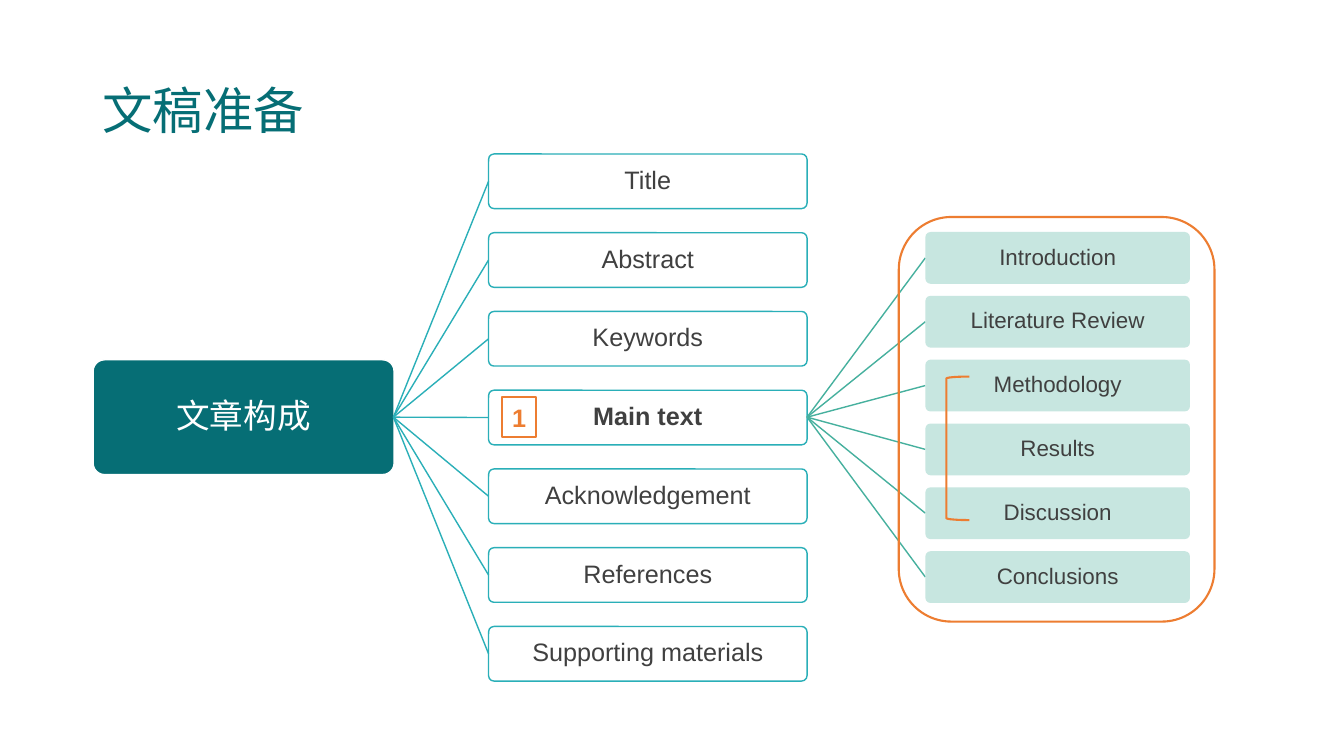
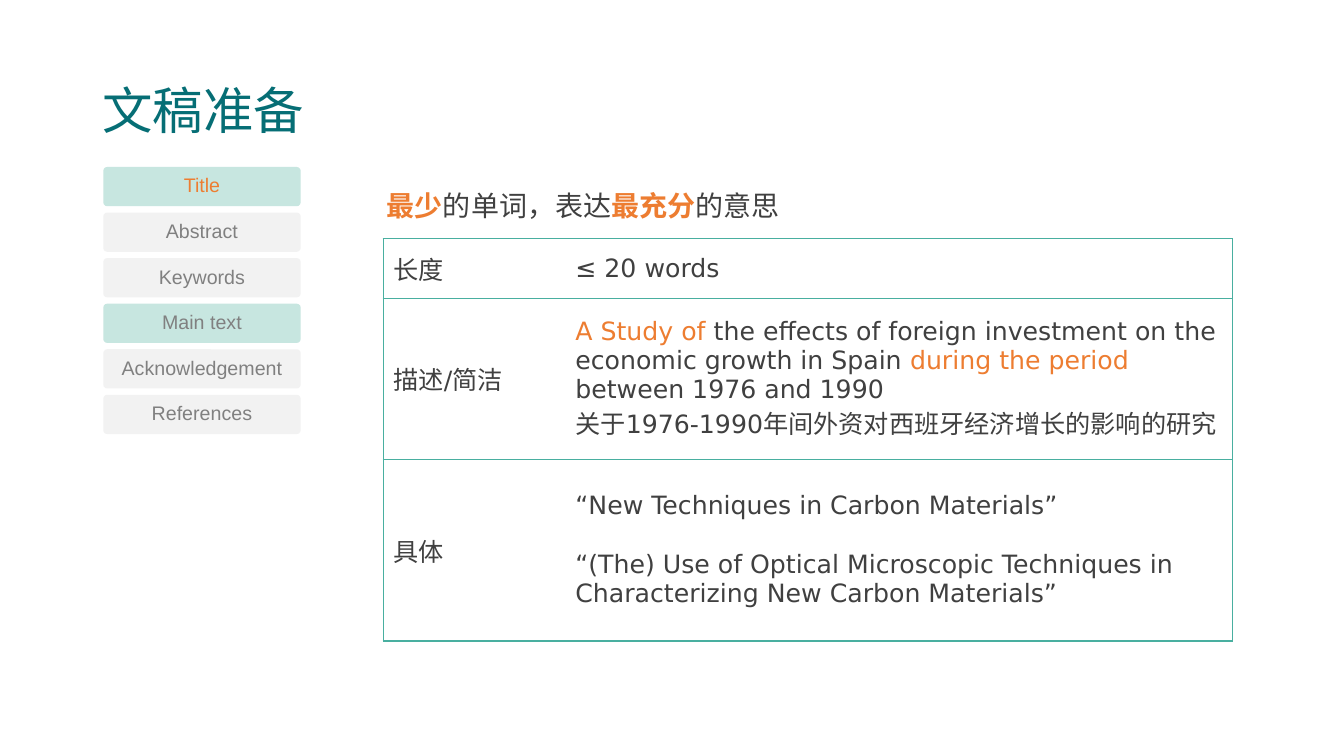
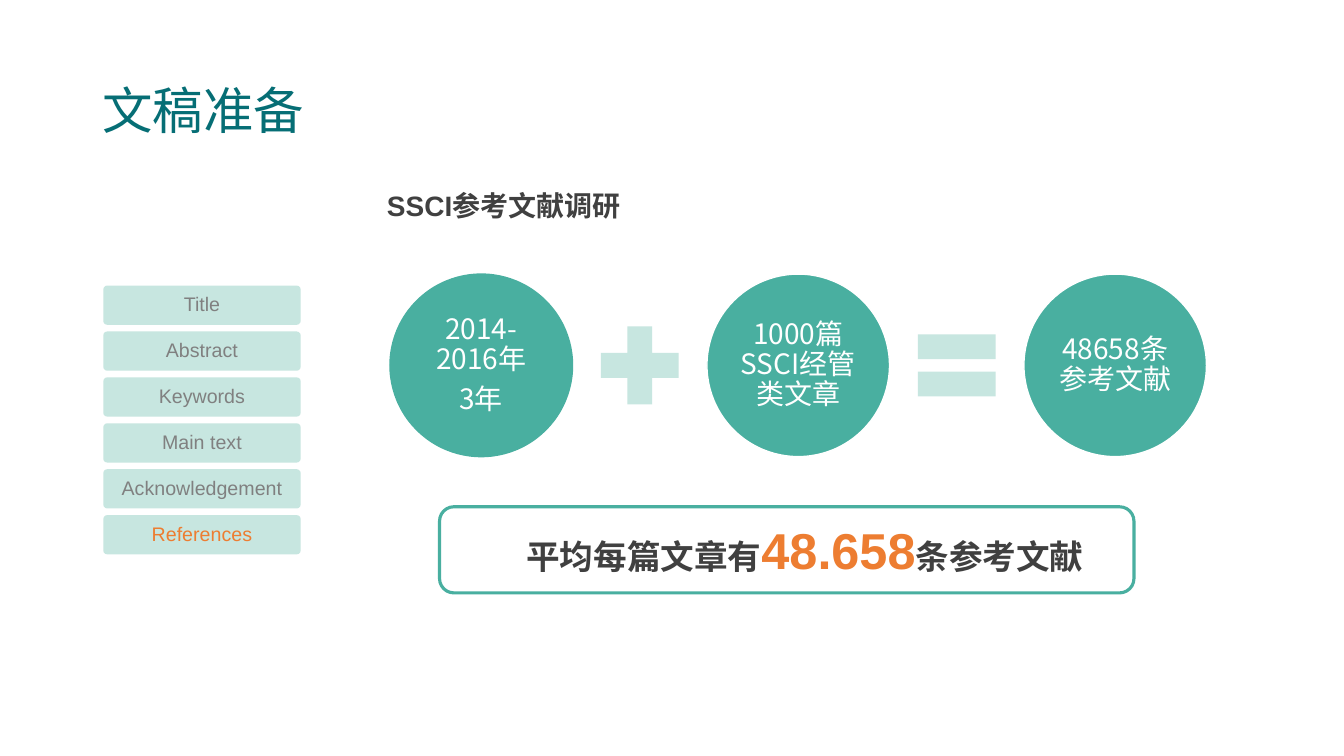
from lxml import etree
from pptx import Presentation
from pptx.dml.color import RGBColor
from pptx.enum.shapes import MSO_CONNECTOR, MSO_SHAPE
from pptx.enum.text import MSO_ANCHOR, PP_ALIGN
from pptx.oxml.ns import qn
from pptx.util import Pt

TEAL = RGBColor(0x06, 0x6E, 0x75)
CYAN = RGBColor(0x2A, 0xAF, 0xB8)
GREEN = RGBColor(0x46, 0xB0, 0x9E)
SEA = RGBColor(0x49, 0xAF, 0xA0)
MINT = RGBColor(0xC7, 0xE6, 0xE0)
PALE = RGBColor(0xF2, 0xF2, 0xF2)
ORANGE = RGBColor(0xED, 0x7D, 0x31)
DARK = RGBColor(0x40, 0x40, 0x40)
GREY = RGBColor(0x80, 0x80, 0x80)
WHITE = RGBColor(0xFF, 0xFF, 0xFF)

LATIN, CHINESE, TABLE_FONT = "Arial", "Noto Sans CJK SC", "DejaVu Sans"
LEFT, CENTER = PP_ALIGN.LEFT, PP_ALIGN.CENTER
MIDDLE = MSO_ANCHOR.MIDDLE
STRAIGHT = MSO_CONNECTOR.STRAIGHT
RECT, ROUND, OVAL = MSO_SHAPE.RECTANGLE, MSO_SHAPE.ROUNDED_RECTANGLE, MSO_SHAPE.OVAL
BRACKET = MSO_SHAPE.LEFT_BRACKET
PLUS, EQUAL = MSO_SHAPE.MATH_PLUS, MSO_SHAPE.MATH_EQUAL

TITLE = "文稿准备"
SECTIONS = ["Title", "Abstract", "Keywords", "Main text", "Acknowledgement", "References"]


class Deck:
    """Holds the shared style and the page being drawn."""

    def __init__(self):
        self.show = Presentation()
        self.show.slide_width, self.show.slide_height = Pt(960), Pt(540)
        self.page = None

    def new_page(self):
        self.page = self.show.slides.add_slide(self.show.slide_layouts[5])
        title = self.page.shapes.title
        title.left, title.top, title.width, title.height = Pt(66), Pt(29), Pt(828), Pt(104)
        title.text_frame.vertical_anchor = MIDDLE
        self.set_text(title.text_frame, [TITLE], 36, TEAL, align=LEFT, spacing=0.9)

    def set_text(self, frame, lines, size, color, font=LATIN, bold=False, align=LEFT,
                 spacing=1.0, gap=0):
        """Fill in paragraphs; a line is a string or a list of (text, changes) spans."""
        for index, line in enumerate(lines):
            para = frame.add_paragraph() if index else frame.paragraphs[0]
            para.alignment, para.line_spacing = align, spacing
            if index:
                para.space_before = Pt(gap)
            para.font.name, para.font.size, para.font.bold = font, Pt(size), bold
            para.font.color.rgb = color
            east_asian = etree.SubElement(para.font._rPr, qn("a:ea"))
            east_asian.set("typeface", CHINESE)
            for text, changes in [(line, {})] if isinstance(line, str) else line:
                span = para.add_run()
                span.text = text
                if "color" in changes:
                    span.font.color.rgb = changes["color"]
                if "bold" in changes:
                    span.font.bold = changes["bold"]
                if "size" in changes:
                    span.font.size = Pt(changes["size"])

    def shape(self, kind, left, top, width, height, fill=None, line=None, weight=1,
              corner=None, inset=1):
        item = self.page.shapes.add_shape(kind, Pt(left), Pt(top), Pt(width), Pt(height))
        item.shadow.inherit = False
        if fill is None:
            item.fill.background()
        else:
            item.fill.solid()
            item.fill.fore_color.rgb = fill
        if line is None:
            item.line.fill.background()
        else:
            item.line.color.rgb, item.line.width = line, Pt(weight)
        if corner is not None:
            item.adjustments[0] = corner
        frame = item.text_frame
        frame.word_wrap, frame.vertical_anchor = True, MIDDLE
        frame.margin_left = frame.margin_right = Pt(inset)
        frame.margin_top = frame.margin_bottom = Pt(inset)
        return item

    def label_box(self, text, left, top, width, height, size, color=DARK, font=LATIN,
                  bold=False, **look):
        box = self.shape(ROUND, left, top, width, height, corner=0.1, **look)
        self.set_text(box.text_frame, [text], size, color, font, bold, CENTER, 0.9)

    def connect(self, start, end, color):
        link = self.page.shapes.add_connector(STRAIGHT, *(Pt(v) for v in start + end))
        link.line.color.rgb, link.line.width = color, Pt(1)
        etree.SubElement(link._element.spPr, qn("a:effectLst"))

    def headline(self, line, **style):
        box = self.page.shapes.add_textbox(Pt(269.3), Pt(119), Pt(590), Pt(52))
        box.text_frame.word_wrap = True
        self.set_text(box.text_frame, [line], 20, DARK, spacing=1.5, **style)

    def section_list(self, top, pitch, fills, active):
        for index, (name, fill) in enumerate(zip(SECTIONS, fills)):
            color = ORANGE if name == active else GREY
            self.label_box(name, 73.8, top + index * pitch, 141, 28, 14, color, fill=fill)

    def fan(self, names, start, left, top, pitch, width, height, size, link_color,
            strong=None, **look):
        """Stack boxes and join each one to the start point."""
        for index, name in enumerate(names):
            box_top = top + index * pitch
            self.connect(start, (left, box_top + height / 2), link_color)
            self.label_box(name, left, box_top, width, height, size,
                           bold=name == strong, **look)

    def table(self, left, top, widths, heights, rows):
        frame = self.page.shapes.add_table(len(rows), len(widths), Pt(left), Pt(top),
                                           Pt(sum(widths)), Pt(sum(heights)))
        grid = frame.table
        grid.first_row = grid.horz_banding = False
        for column, width in zip(grid.columns, widths):
            column.width = Pt(width)
        for row, height in zip(grid.rows, heights):
            row.height = Pt(height)
        for r, row in enumerate(rows):
            for c, lines in enumerate(row):
                cell = grid.cell(r, c)
                cell.vertical_anchor = MIDDLE
                last = c == len(widths) - 1
                self.cell_borders(cell, {"L": c == 0, "R": last, "T": True, "B": True})
                cell.fill.solid()
                cell.fill.fore_color.rgb = WHITE
                gap = 21 if r == len(rows) - 1 else 0
                self.set_text(cell.text_frame, lines, 18, DARK, TABLE_FONT, gap=gap)

    def cell_borders(self, cell, sides):
        properties = cell._tc.get_or_add_tcPr()
        for side, visible in sides.items():
            edge = etree.SubElement(properties, qn("a:ln" + side), w=str(Pt(1)))
            if visible:
                fill = etree.SubElement(edge, qn("a:solidFill"))
                etree.SubElement(fill, qn("a:srgbClr"), val=str(SEA))
            else:
                etree.SubElement(edge, qn("a:noFill"))


def structure_page(deck):
    deck.new_page()
    # Tree: root, article parts, main text sections
    middle = 298
    deck.label_box("文章构成", 66.5, middle - 41, 215, 82, 24, WHITE, CHINESE,
                   fill=TEAL, line=WHITE)
    deck.fan(SECTIONS + ["Supporting materials"], (281, middle), 349, 110, 56.25,
             227.5, 39, 18, CYAN, strong="Main text", line=CYAN)
    deck.fan(["Introduction", "Literature Review", "Methodology", "Results",
              "Discussion", "Conclusions"], (576.5, middle), 661, 165.7, 45.6,
             189, 37, 16, GREEN, fill=MINT)
    # Orange marks
    badge = deck.shape(RECT, 358.5, 283.5, 24.5, 29, line=ORANGE, weight=1.5)
    deck.set_text(badge.text_frame, ["1"], 18, ORANGE, bold=True, align=CENTER)
    deck.shape(ROUND, 642, 155, 225.5, 289, line=ORANGE, weight=1.5)
    deck.shape(BRACKET, 676, 269, 16.5, 102.5, line=ORANGE, weight=1.5)


def title_page(deck):
    deck.new_page()
    deck.section_list(119.3, 32.55, [MINT, PALE, PALE, MINT, PALE, PALE], "Title")
    accent = {"color": ORANGE}
    strong = {"color": ORANGE, "bold": True}
    deck.headline([("最少", strong), ("的单词，表达", {}), ("最充分", strong), ("的意思", {})])
    # Advice table
    study = [("A Study of ", accent),
             ("the effects of foreign investment on the economic growth in Spain ", {}),
             ("during the period", accent),
             (" between 1976 and 1990", {})]
    deck.table(273.8, 170.5, [130, 476.8], [42.5, 105, 129.6], [
        [["长度"], ["≤ 20 words"]],
        [["描述/简洁"], [study, "关于1976-1990年间外资对西班牙经济增长的影响的研究"]],
        [["具体"], ["“New Techniques in Carbon Materials”",
                  "“(The) Use of Optical Microscopic Techniques in "
                  "Characterizing New Carbon Materials”"]],
    ])


def references_page(deck):
    deck.new_page()
    deck.section_list(204, 32.8, [MINT] * len(SECTIONS), "References")
    deck.headline("SSCI参考文献调研", bold=True)
    # Equation: circles with operators halfway between them
    first, pitch, middle, diameter, sign = 343.8, 226.4, 261, 130.4, 75.6
    circles = [(["2014-2016年", "3年"], SEA), (["1000篇SSCI经管类文章"], WHITE),
               (["48658条参考文献"], WHITE)]
    for index, (lines, outline) in enumerate(circles):
        circle = deck.shape(OVAL, first + index * pitch - diameter / 2,
                            middle - diameter / 2, diameter, diameter,
                            fill=SEA, line=outline, inset=2)
        deck.set_text(circle.text_frame, lines, 20, WHITE, CHINESE, align=CENTER,
                      spacing=0.9, gap=7)
    for index, operator in enumerate([PLUS, EQUAL]):
        deck.shape(operator, first + (index + 0.5) * pitch - sign / 2,
                   middle - sign / 2, sign, sign, fill=MINT)
    # Result
    result = deck.shape(ROUND, 314, 362, 496, 61.5, line=SEA, weight=2.25, inset=4)
    result.text_frame.margin_left = Pt(30)
    deck.set_text(result.text_frame,
                  [[("平均每篇文章有", {}), ("48.658", {"color": ORANGE, "size": 36}),
                    ("条参考文献", {})]], 24, DARK, bold=True, align=CENTER)


def main():
    deck = Deck()
    structure_page(deck)
    title_page(deck)
    references_page(deck)
    deck.show.save("out.pptx")


if __name__ == "__main__":
    main()
